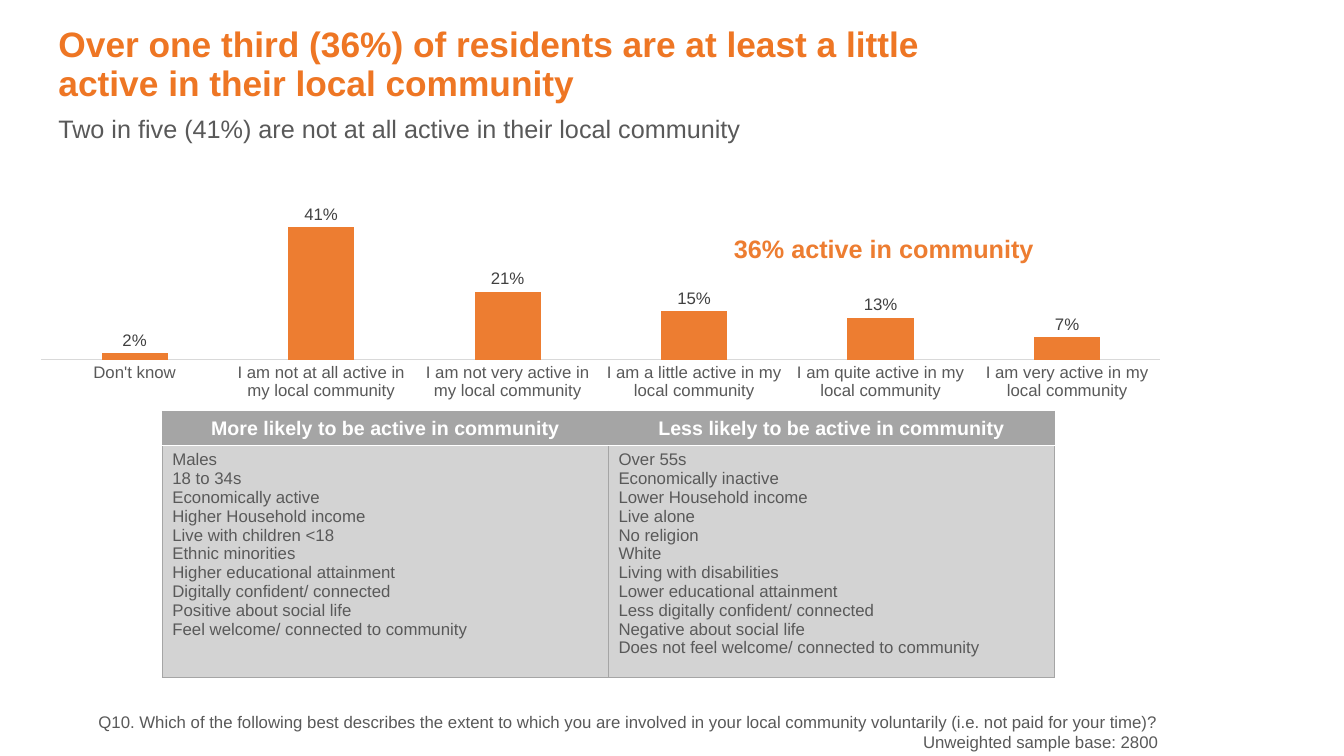
"""Build a slide on how active residents are in their local community."""
from lxml import etree
from pptx import Presentation
from pptx import util as u
from pptx.chart.data import CategoryChartData
from pptx.dml.color import RGBColor
from pptx.enum import chart as charts, text
from pptx.oxml import ns, parse_xml

WIDTH, HEIGHT = 13.33, 7.5
FONT = "Arial"
COLOURS = {"title": "EE7624", "bar": "ED7D31", "body": "595959", "label": "404040",
           "axis": "D9D9D9", "head": "A5A5A5", "cell": "D3D3D3", "white": "FFFFFF"}

TITLE = "Over one third (36%) of residents are at least a little active in their local community"
SUBTITLE = "Two in five (41%) are not at all active in their local community"
CALLOUT = "36% active in community"
FOOTNOTE = [
    "Q10. Which of the following best describes the extent to which you are involved in your "
    "local community voluntarily (i.e. not paid for your time)?",
    "Unweighted sample base: 2800",
]
ACTIVITY = {
    "I am very active in my local community": 0.07,
    "I am quite active in my local community": 0.13,
    "I am a little active in my local community": 0.15,
    "I am not very active in my local community": 0.21,
    "I am not at all active in my local community": 0.41,
    "Don't know": 0.02,
}
GROUPS = {
    "More likely to be active in community": [
        "Males", "18 to 34s", "Economically active", "Higher Household income",
        "Live with children <18", "Ethnic minorities", "Higher educational attainment",
        "Digitally confident/ connected", "Positive about social life",
        "Feel welcome/ connected to community"],
    "Less likely to be active in community": [
        "Over 55s", "Economically inactive", "Lower Household income", "Live alone",
        "No religion", "White", "Living with disabilities", "Lower educational attainment",
        "Less digitally confident/ connected", "Negative about social life",
        "Does not feel welcome/ connected to community"],
}

LEFT = 0.48
TITLE_AREA = (LEFT, 0.22, 9.49, 1.45)
SUBTITLE_AREA = (LEFT, 1.08, WIDTH - LEFT - 0.03, 0.4)
CHART_AREA = (0.18, 2.04, 11.56, 1.96)
CALLOUT_AREA = (6.89, 2.27, 3.75, 0.4)
TABLE_AREA = (1.61, 4.08, 8.85, 2.63)
FOOTNOTE_AREA = (0.79, 7.06, 10.7, 0.4)
HEAD_ROW = 0.34
PLOT_SHARES = {"x": 0.02, "y": 0.04, "w": 0.96, "h": 0.74}


def inches(area):
    return [u.Inches(length) for length in area]


def colour(name):
    return RGBColor.from_string(COLOURS[name])


def style_font(font, size, shade, bold=False):
    font.name, font.size, font.bold = FONT, u.Pt(size), bold
    font.color.rgb = colour(shade)


def write(frame, lines, size=12, shade="body", bold=False, align=text.PP_ALIGN.LEFT,
          spacing=None):
    """Write each line as a paragraph of the frame."""
    frame.word_wrap = True
    for index, line in enumerate(lines):
        para = frame.paragraphs[0] if index == 0 else frame.add_paragraph()
        para.alignment = align
        if spacing:
            para.line_spacing = spacing
        span = para.add_run()
        span.text = line
        style_font(span.font, size, shade, bold)


def add_text(page, area, lines, **style):
    box = page.shapes.add_textbox(*inches(area))
    write(box.text_frame, lines, **style)
    return box


def add_title(page):
    title = page.shapes.title
    title.left, title.top, title.width, title.height = inches(TITLE_AREA)
    frame = title.text_frame
    frame.auto_size = text.MSO_AUTO_SIZE.NONE
    frame.vertical_anchor = text.MSO_ANCHOR.TOP
    frame.margin_top = u.Inches(0.03)
    write(frame, [TITLE], size=25.2, shade="title", bold=True, spacing=0.94)


def add_activity_chart(page):
    data = CategoryChartData(number_format="0%")
    data.categories = list(ACTIVITY)
    data.add_series("Series 1", list(ACTIVITY.values()))
    chart = page.shapes.add_chart(
        charts.XL_CHART_TYPE.COLUMN_CLUSTERED, *inches(CHART_AREA), data).chart
    chart.has_legend = chart.has_title = False
    style_font(chart.font, 12, "body")

    axis = chart.category_axis
    axis.reverse_order = True
    axis.major_tick_mark = axis.minor_tick_mark = charts.XL_TICK_MARK.NONE
    axis.format.line.color.rgb = colour("axis")
    axis.format.line.width = u.Pt(0.75)
    style_font(axis.tick_labels.font, 12, "body")
    scale = chart.value_axis
    scale.visible = scale.has_major_gridlines = False
    scale.minimum_scale, scale.maximum_scale = 0, 0.45

    plot = chart.plots[0]
    plot.gap_width = 182
    plot.vary_by_categories = False
    bars = plot.series[0]
    bars.format.fill.solid()
    bars.format.fill.fore_color.rgb = colour("bar")
    plot.has_data_labels = True
    labels = plot.data_labels
    labels.show_value = True
    labels.number_format, labels.number_format_is_linked = "0%", False
    labels.position = charts.XL_LABEL_POSITION.OUTSIDE_END
    style_font(labels.font, 12, "label")

    shares = "".join(f'<c:{key} val="{share}"/>' for key, share in PLOT_SHARES.items())
    layout = parse_xml(
        f'<c:layout {ns.nsdecls("c")}><c:manualLayout><c:layoutTarget val="inner"/>'
        f'<c:xMode val="edge"/><c:yMode val="edge"/>{shares}</c:manualLayout></c:layout>')
    area = chart.plots[0]._element.getparent()
    for old in area.findall(ns.qn("c:layout")):
        area.remove(old)
    area.insert(0, layout)


def set_borders(cell, **sides):
    properties = cell._tc.get_or_add_tcPr()
    for side in "LRTB":
        shade, points = sides.get(side, ("head", 0.5))
        line = etree.SubElement(properties, ns.qn(f"a:ln{side}"), w=str(u.Pt(points)))
        fill = etree.SubElement(line, ns.qn("a:solidFill"))
        etree.SubElement(fill, ns.qn("a:srgbClr"), val=COLOURS[shade])


def fill_cell(cell, shade):
    cell.fill.solid()
    cell.fill.fore_color.rgb = colour(shade)


def add_group_table(page):
    table = page.shapes.add_table(2, len(GROUPS), *inches(TABLE_AREA)).table
    table.first_row = table.horz_banding = False
    table.rows[0].height = u.Inches(HEAD_ROW)
    table.rows[1].height = u.Inches(TABLE_AREA[3] - HEAD_ROW)
    divider = ("white", 1)
    for column, (heading, traits) in enumerate(GROUPS.items()):
        head, body = table.cell(0, column), table.cell(1, column)
        set_borders(head, B=divider)
        set_borders(body, T=divider)
        fill_cell(head, "head")
        fill_cell(body, "cell")
        head.vertical_anchor = text.MSO_ANCHOR.MIDDLE
        write(head.text_frame, [heading], size=14, shade="white", bold=True,
              align=text.PP_ALIGN.CENTER)
        write(body.text_frame, traits)


def main():
    deck = Presentation()
    deck.slide_width, deck.slide_height = inches((WIDTH, HEIGHT))
    page = deck.slides.add_slide(deck.slide_layouts.get_by_name("Title Only"))
    add_title(page)
    add_activity_chart(page)
    note = add_text(page, FOOTNOTE_AREA, FOOTNOTE, align=text.PP_ALIGN.RIGHT).text_frame
    note.vertical_anchor = text.MSO_ANCHOR.MIDDLE
    note.margin_left = note.margin_right = note.margin_top = note.margin_bottom = 0
    add_text(page, SUBTITLE_AREA, [SUBTITLE], size=18)
    add_group_table(page)
    add_text(page, CALLOUT_AREA, [CALLOUT], size=18, shade="bar", bold=True,
             align=text.PP_ALIGN.CENTER)
    deck.save("out.pptx")


if __name__ == "__main__":
    main()
